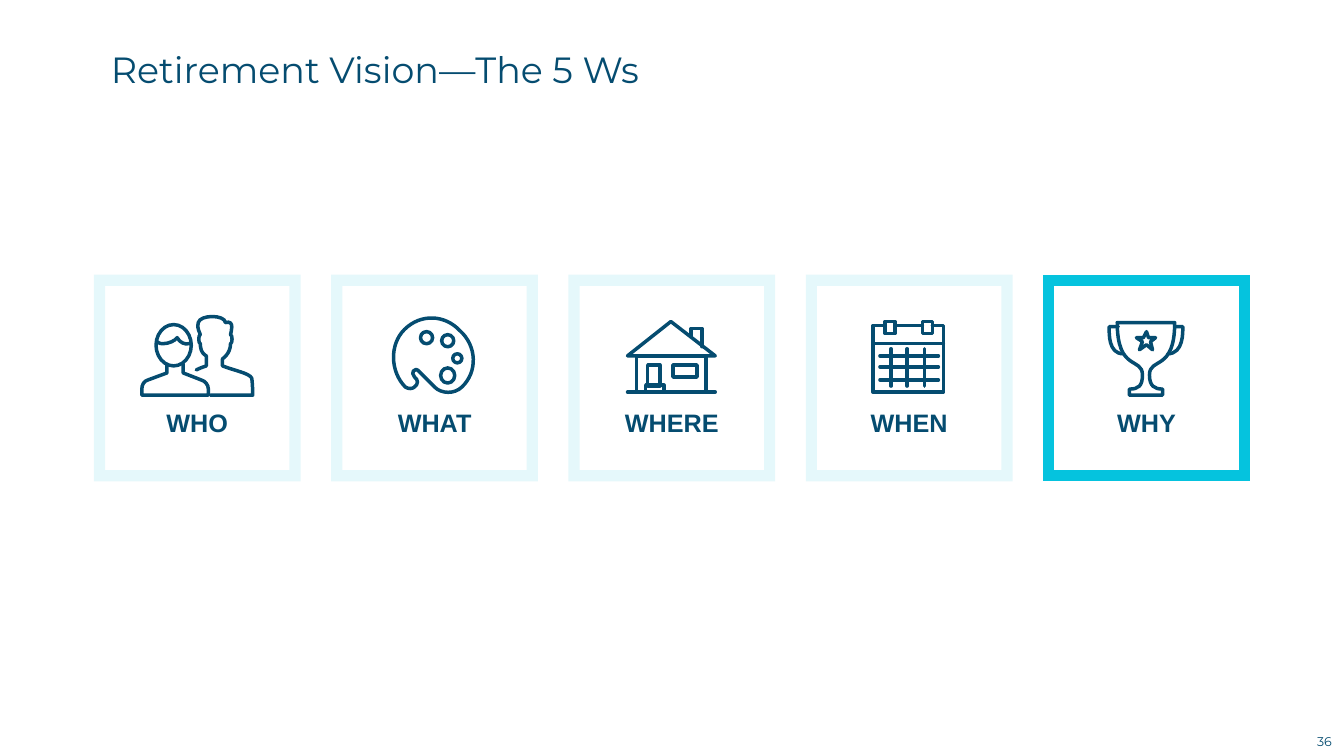
from lxml import etree
from pptx import Presentation
from pptx.dml.color import RGBColor
from pptx.enum.shapes import MSO_CONNECTOR, MSO_SHAPE
from pptx.enum.text import MSO_ANCHOR, MSO_AUTO_SIZE, PP_ALIGN
from pptx.oxml.ns import qn
from pptx.util import Pt

RECT, OVAL = MSO_SHAPE.RECTANGLE, MSO_SHAPE.OVAL
STRAIGHT = MSO_CONNECTOR.STRAIGHT
CENTER, LEFT = PP_ALIGN.CENTER, PP_ALIGN.LEFT
MIDDLE, TOP = MSO_ANCHOR.MIDDLE, MSO_ANCHOR.TOP
FIT_SHAPE, NO_FIT = MSO_AUTO_SIZE.SHAPE_TO_FIT_TEXT, MSO_AUTO_SIZE.NONE

NAVY, CYAN = "054C70", "05C3DE"
CARD_LEFT, CARD_TOP, CARD_SIZE, CARD_PITCH = 71.1, 200.16, 139.68, 169.5
LABEL_OFFSET, LABEL_HEIGHT = 87.12, 28.8
GRID = 0.72  # points per unit of the icon grid, counted from a card's corner

# Outlines: a start point, then (x, y) for a line or six numbers for a Bezier curve.
WOMAN_SHOULDERS = [(67, 84), (67, 92), (48, 99), (44, 100, 42, 104, 42, 108),
                   (42, 114), (108, 114), (108, 108),
                   (108, 104, 105, 100, 101, 99), (83, 92), (83, 83)]
WOMAN_FRINGE = [(91, 63), (90, 63, 90, 63, 89, 63), (84, 64, 80, 62, 77, 57),
                (75, 60, 69, 63, 63, 63), (61, 63, 59, 63, 57, 61)]
MAN = [(96, 89), (100, 87, 103, 86, 106, 85), (106, 75),
       (106, 75, 100, 73, 100, 63), (98, 63, 98, 54, 100, 54),
       (100, 53, 96, 47, 98, 42), (100, 34, 124, 34, 125, 42),
       (135, 39, 130, 53, 130, 54), (132, 54, 132, 63, 130, 63),
       (130, 73, 122, 78, 122, 78), (122, 85),
       (135, 90, 148, 92, 151, 97), (152, 103, 152, 114, 152, 114), (110, 114)]
PALETTE = [(68, 106), (53, 91, 52, 64, 67, 49), (83, 33, 107, 34, 122, 50),
           (139, 65, 140, 91, 124, 106), (117, 113, 104, 113, 97, 106), (82, 91),
           (80, 88, 77, 88, 76, 90), (75, 91, 75, 94, 77, 96),
           (81, 99, 81, 103, 77, 106), (75, 108, 71, 108, 68, 106)]
ROOF = [(96, 41), (53, 75), (140, 75), (96, 41)]
CHIMNEY = [(127, 66), (127, 48), (116, 48), (116, 56)]
CALENDAR_PAGE = [(73, 45), (61, 45), (61, 111), (131, 111), (131, 45), (120, 45)]
STAR = [(97, 51), (99, 57), (106, 57), (101, 61), (103, 69), (97, 64),
        (90, 69), (93, 61), (87, 57), (94, 57), (97, 51)]
LEFT_HANDLE = [(74, 73), (59, 73, 60, 53, 60, 46), (69, 46)]
RIGHT_HANDLE = [(118, 73), (134, 73, 133, 51, 133, 46), (125, 46)]
CUP = [(125, 42), (68, 42), (68, 91, 93, 76, 93, 94), (93, 105, 89, 108, 80, 108),
       (80, 114), (113, 114), (113, 108), (105, 108, 100, 105, 100, 94),
       (100, 76, 125, 91, 125, 42)]

# Boxes are (left, top, width, height); rules are (x1, y1, x2, y2).
ICONS = {
    "WHO": {"ovals": [(56, 44, 35, 41)],
            "outlines": [WOMAN_SHOULDERS, WOMAN_FRINGE, MAN]},
    "WHAT": {"ovals": [(104, 54, 12, 12), (115, 73, 9, 9),
                       (103, 87, 14, 15), (83, 51, 12, 12)],
             "outlines": [PALETTE]},
    "WHERE": {"rects": [(62, 75, 69, 36), (73, 84, 12, 21),
                        (98, 84, 24, 12), (71, 104, 18, 7)],
              "rules": [(53, 111, 140, 111)],
              "outlines": [ROOF, CHIMNEY]},
    "WHEN": {"rects": [(73, 41, 10, 12), (110, 41, 10, 12)],
             "rules": [(83, 45, 110, 45), (61, 63, 131, 63)]
                      + [(x, 68, x, 105) for x in (79, 95, 112)]
                      + [(68, y, 126, y) for y in (75, 86, 99)],
             "outlines": [CALENDAR_PAGE]},
    "WHY": {"outlines": [STAR, LEFT_HANDLE, RIGHT_HANDLE, CUP]},
}


def rgb(hex_color):
    return RGBColor.from_string(hex_color)


def style_line(line, color, width, join):
    line.color.rgb = rgb(color)
    line.width = Pt(width)
    ln = line._ln
    ln.set("cap", "rnd" if join == "round" else "flat")
    etree.SubElement(ln, qn(f"a:{join}"))


def style_outline(shape, color=NAVY, width=2.5, join="round"):
    shape.shadow.inherit = False
    shape.fill.background()
    style_line(shape.line, color, width, join)


def write_text(shape, text, font, size, align=LEFT, anchor=TOP, bold=False, fit=NO_FIT):
    frame = shape.text_frame
    frame.text = text
    frame.word_wrap = True
    frame.auto_size = fit
    frame.vertical_anchor = anchor
    paragraph = frame.paragraphs[0]
    paragraph.alignment = align
    run_font = paragraph.runs[0].font
    run_font.name, run_font.size, run_font.bold = font, Pt(size), bold
    run_font.color.rgb = rgb(NAVY)


def place(shape, left, top, width, height):
    shape.left, shape.top = Pt(left), Pt(top)
    shape.width, shape.height = Pt(width), Pt(height)


def add_outline(shapes, outline, on_slide):
    """Draw the segment ends as a freeform, then bend its curved segments."""
    ends = [on_slide(*segment[-2:]) for segment in outline]
    left, top = min(x for x, _ in ends), min(y for _, y in ends)
    builder = shapes.build_freeform(*ends[0])
    builder.add_line_segments(ends[1:], close=ends[0] == ends[-1])
    shape = builder.convert_to_shape()
    straight_segments = list(shape._element.iter(qn("a:lnTo")))
    for segment, straight in zip(outline[1:], straight_segments):
        if len(segment) == 6:
            curve = etree.Element(qn("a:cubicBezTo"))
            for control in (segment[:2], segment[2:4], segment[4:]):
                x, y = on_slide(*control)
                etree.SubElement(curve, qn("a:pt"), x=str(x - left), y=str(y - top))
            straight.getparent().replace(straight, curve)
    style_outline(shape)


def draw_icon(shapes, card_left, rects=(), ovals=(), rules=(), outlines=()):
    def on_slide(x, y):
        return Pt(card_left + x * GRID), Pt(CARD_TOP + y * GRID)

    for preset, boxes in ((RECT, rects), (OVAL, ovals)):
        for x, y, width, height in boxes:
            style_outline(shapes.add_shape(preset, *on_slide(x, y),
                                           Pt(width * GRID), Pt(height * GRID)))
    for x1, y1, x2, y2 in rules:
        rule = shapes.add_connector(STRAIGHT, *on_slide(x1, y1), *on_slide(x2, y2))
        style_line(rule.line, NAVY, 2.5, "round")
        etree.SubElement(rule._element.spPr, qn("a:effectLst"))
    for outline in outlines:
        add_outline(shapes, outline, on_slide)


def add_card(slide, left, label, icon, highlighted):
    shapes = slide.shapes.add_group_shape().shapes
    frame = shapes.add_shape(RECT, Pt(left), Pt(CARD_TOP), Pt(CARD_SIZE), Pt(CARD_SIZE))
    style_outline(frame, CYAN, 8, "miter")
    if not highlighted:
        line_color = frame.line._ln.find(".//" + qn("a:srgbClr"))
        etree.SubElement(line_color, qn("a:alpha"), val="10000")
    caption = shapes.add_textbox(Pt(left), Pt(CARD_TOP + LABEL_OFFSET),
                                 Pt(CARD_SIZE), Pt(LABEL_HEIGHT))
    write_text(caption, label, "Arial", 18, CENTER, bold=True, fit=FIT_SHAPE)
    draw_icon(shapes, left, **icon)


def add_page_number(slide, number):
    page_number = slide.shapes.add_textbox(Pt(933.84), Pt(520.56), Pt(24.48), Pt(18))
    write_text(page_number, number, "Montserrat", 9, CENTER, MIDDLE)
    frame = page_number.text_frame
    frame.margin_left = frame.margin_right = frame.margin_top = frame.margin_bottom = 0


def main():
    presentation = Presentation()
    presentation.slide_width, presentation.slide_height = Pt(960), Pt(540)
    slide = presentation.slides.add_slide(presentation.slide_layouts[5])
    title = slide.shapes.title
    place(title, 72, 20.16, 828, 58.32)
    write_text(title, "Retirement Vision—The 5 Ws", "Montserrat", 26, anchor=MIDDLE)
    for index, (label, icon) in enumerate(ICONS.items()):
        add_card(slide, CARD_LEFT + index * CARD_PITCH, label, icon, label == "WHY")
    add_page_number(slide, "36")
    presentation.save("out.pptx")


if __name__ == "__main__":
    main()
